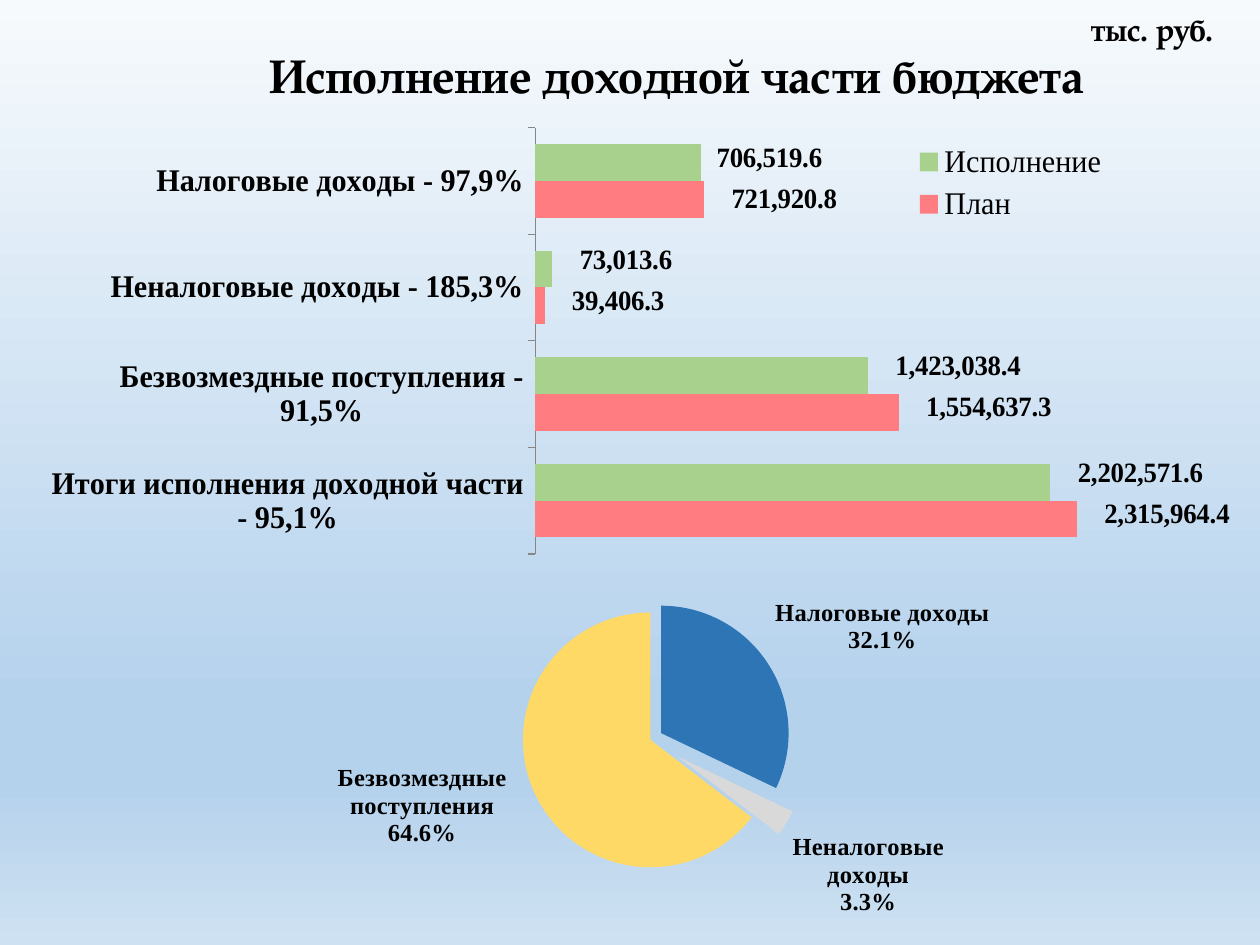
from copy import deepcopy
from dataclasses import dataclass

from lxml.etree import SubElement
from pptx import Presentation
from pptx.chart.data import CategoryChartData
from pptx.dml.color import RGBColor
from pptx.enum.chart import XL_CHART_TYPE, XL_LABEL_POSITION, XL_LEGEND_POSITION, XL_TICK_MARK
from pptx.enum.text import MSO_ANCHOR, PP_ALIGN
from pptx.oxml import parse_xml
from pptx.oxml.ns import nsdecls, qn
from pptx.util import Inches, Pt

HEADING_FONT = "TeX Gyre Pagella"
CHART_FONT = "Times New Roman"
BLACK = "000000"
BACKGROUND_STOPS = [(0, "F7FAFD"), (74, "B5D2EC"), (83, "B5D2EC"), (100, "CEE1F2")]


@dataclass
class BudgetSeries:
    name: str
    color: str
    values: list[float]
    label_shifts: list[tuple[float, float]]


@dataclass
class IncomeShare:
    name: str
    percent: float
    color: str
    explosion: int
    label_shift: tuple[float, float]


BUDGET_LINES = ["Итоги исполнения доходной части - 95,1%", "Безвозмездные поступления - 91,5%",
                "Неналоговые доходы - 185,3%", "Налоговые доходы - 97,9%"]
BUDGET_SERIES = [
    BudgetSeries("План", "FF7C80", [2315964.4, 1554637.3, 39406.3, 721920.8],
                 [(0.02, -0.01), (0.02, -0.01), (0.02, -0.01), (0.02, 0)]),
    BudgetSeries("Исполнение", "A9D18E", [2202571.6, 1423038.4, 73013.6, 706519.6],
                 [(0.02, -0.02), (0.02, -0.02), (0.02, -0.02), (0.01, -0.01)]),
]
INCOME_SHARES = [
    IncomeShare("Налоговые доходы", 32.1, "2E75B6", 10, (0, -0.02)),
    IncomeShare("Неналоговые доходы", 3.3, "D9D9D9", 25, (0, 0.08)),
    IncomeShare("Безвозмездные поступления", 64.6, "FFD966", 0, (-0.02, -0.1)),
]


def rgb(color: str) -> RGBColor:
    return RGBColor.from_string(color)


def set_font(font, size: float, name: str, bold: bool = False) -> None:
    font.size, font.name, font.bold = Pt(size), name, bold
    font.color.rgb = rgb(BLACK)


def paint(fill, color: str) -> None:
    fill.solid()
    fill.fore_color.rgb = rgb(color)


def set_gradient_background(slide) -> None:
    fill = slide.background.fill
    fill.gradient()
    fill.gradient_angle = 270
    stops = fill.gradient_stops._gsLst
    for stop in list(stops):
        stops.remove(stop)
    for percent, color in BACKGROUND_STOPS:
        stop = SubElement(stops, qn("a:gs"), pos=str(percent * 1000))
        SubElement(stop, qn("a:srgbClr"), val=color)


def manual_layout(inner: bool = False, **fractions: float):
    target = '<c:layoutTarget val="inner"/>' if inner else ""
    modes = '<c:xMode val="edge"/><c:yMode val="edge"/>' if "w" in fractions else ""
    values = "".join(f'<c:{key} val="{value}"/>' for key, value in fractions.items())
    return parse_xml(f'<c:layout {nsdecls("c")}><c:manualLayout>{target}{modes}{values}'
                     "</c:manualLayout></c:layout>")


def explosion_xml(percent: int):
    return parse_xml(f'<c:explosion {nsdecls("c")} val="{percent}"/>')


def set_plot_area(chart, x: float, y: float, w: float, h: float) -> None:
    plot_area = chart._chartSpace.chart.plotArea
    for layout in plot_area.findall(qn("c:layout")):
        plot_area.remove(layout)
    plot_area.insert(0, manual_layout(inner=True, x=x, y=y, w=w, h=h))


def shift_labels(series, shifts: list[tuple[float, float]]) -> None:
    """Give each point the series label settings plus its own offset, without leader lines."""
    labels = series.data_labels._element
    for leader_lines in labels.findall(qn("c:showLeaderLines")):
        leader_lines.set("val", "0")
    settings = [node for node in labels if node.tag != qn("c:showLeaderLines")]
    for index, (x, y) in enumerate(shifts):
        label = parse_xml(f'<c:dLbl {nsdecls("c")}><c:idx val="{index}"/></c:dLbl>')
        label.append(manual_layout(x=x, y=y))
        label.extend(deepcopy(node) for node in settings)
        labels.insert(index, label)


def add_chart(slide, kind, box: tuple, data: CategoryChartData, size: float):
    chart = slide.shapes.add_chart(kind, *map(Inches, box), data).chart
    set_font(chart.font, size, "Calibri")
    chart.has_title = False
    chart.has_legend = False
    return chart


def add_budget_chart(slide) -> None:
    data = CategoryChartData(number_format="#,##0.0")
    data.categories = BUDGET_LINES
    for item in BUDGET_SERIES:
        data.add_series(item.name, item.values)
    chart = add_chart(slide, XL_CHART_TYPE.BAR_CLUSTERED, (0.39, 0.94, 9.38, 3.67), data, 16.8)
    set_plot_area(chart, 0.43, 0.02, 0.517, 0.922)

    lines_axis = chart.category_axis
    lines_axis.major_tick_mark = XL_TICK_MARK.OUTSIDE
    lines_axis.format.line.color.rgb = rgb("868686")
    set_font(lines_axis.tick_labels.font, 18, CHART_FONT, True)
    chart.value_axis.has_major_gridlines = False
    chart.value_axis.visible = False

    chart.has_legend = True
    legend = chart.legend
    legend.position = XL_LEGEND_POSITION.RIGHT
    legend.include_in_layout = False
    set_font(legend.font, 18, CHART_FONT)
    legend._element.find(qn("c:legendPos")).addnext(manual_layout(x=0.76, y=0.04, w=0.18, h=0.2))

    chart.plots[0].gap_width = 91
    chart.plots[0].overlap = 0
    for series, item in zip(chart.plots[0].series, BUDGET_SERIES):
        paint(series.format.fill, item.color)
        labels = series.data_labels
        labels.show_value = True
        labels.number_format, labels.number_format_is_linked = "#,##0.0", False
        labels.position = XL_LABEL_POSITION.OUTSIDE_END
        set_font(labels.font, 16, CHART_FONT, True)
        shift_labels(series, item.label_shifts)


def add_share_chart(slide) -> None:
    data = CategoryChartData(number_format="0.0")
    data.categories = [share.name for share in INCOME_SHARES]
    data.add_series("Доходы", [share.percent for share in INCOME_SHARES])
    chart = add_chart(slide, XL_CHART_TYPE.PIE, (0.63, 4.46, 9.02, 2.81), data, 18)
    set_plot_area(chart, 0.005, 0.053, 0.995, 0.9)

    chart.plots[0].vary_by_categories = True
    series = chart.plots[0].series[0]
    for index, share in enumerate(INCOME_SHARES):
        paint(series.points[index].format.fill, share.color)
    slices = series._element.findall(qn("c:dPt"))
    slices[0].addprevious(explosion_xml(25))
    for pie_slice, share in zip(slices, INCOME_SHARES):
        pie_slice.find(qn("c:spPr")).addprevious(explosion_xml(share.explosion))

    labels = series.data_labels
    labels.show_value = False
    labels.show_category_name = labels.show_percentage = True
    labels.number_format, labels.number_format_is_linked = "0.0%", False
    labels.position = XL_LABEL_POSITION.OUTSIDE_END
    set_font(labels.font, 14, CHART_FONT, True)
    separator = parse_xml(f'<c:separator {nsdecls("c")}>\n</c:separator>')
    labels._element.find(qn("c:showBubbleSize")).addnext(separator)
    shift_labels(series, [share.label_shift for share in INCOME_SHARES])


def add_heading(slide) -> None:
    title = slide.shapes.title
    title.left, title.top, title.width, title.height = map(Inches, (0.98, 0.3, 8.78, 0.64))
    title.text_frame.text = "Исполнение доходной части бюджета"
    title.text_frame.vertical_anchor = MSO_ANCHOR.MIDDLE
    heading = title.text_frame.paragraphs[0]
    heading.alignment, heading.line_spacing = PP_ALIGN.CENTER, 0.9
    set_font(heading.font, 27, HEADING_FONT, True)


def add_unit_note(slide) -> None:
    note = slide.shapes.add_textbox(*map(Inches, (8.56, 0.03, 1.31, 0.4))).text_frame
    note.word_wrap = False
    note.text = "тыс. руб."
    set_font(note.paragraphs[0].font, 18, HEADING_FONT, True)


def main() -> None:
    presentation = Presentation()
    presentation.slide_width, presentation.slide_height = Inches(10), Inches(7.5)
    slide = presentation.slides.add_slide(presentation.slide_layouts[5])
    set_gradient_background(slide)
    add_heading(slide)
    add_budget_chart(slide)
    add_share_chart(slide)
    add_unit_note(slide)
    presentation.save("out.pptx")


if __name__ == "__main__":
    main()
